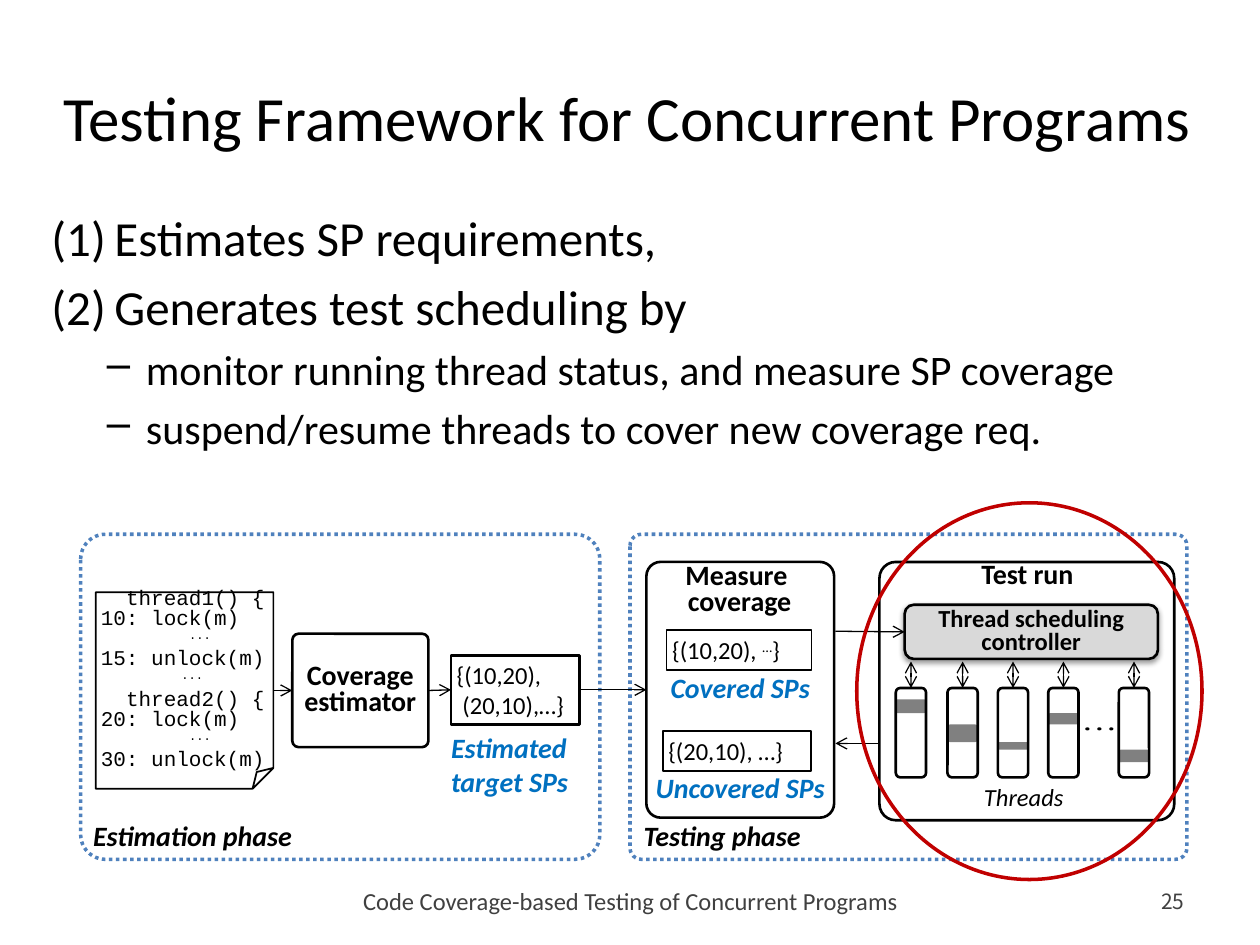
from lxml import etree
from pptx import Presentation
from pptx import util as u
from pptx.dml.color import RGBColor
from pptx.enum import dml, shapes, text
from pptx.oxml.ns import qn

COLORS = {"ink": "000000", "muted": "404040", "phase": "4F81BD", "label": "0070C0",
          "gray": "808080", "panel": "D9D9D9", "paper": "FFFFFF", "focus": "C00000"}
RECT, ROUND, OVAL, PAGE = (shapes.MSO_SHAPE.RECTANGLE, shapes.MSO_SHAPE.ROUNDED_RECTANGLE,
                           shapes.MSO_SHAPE.OVAL, shapes.MSO_SHAPE.FOLDED_CORNER)
LEFT, CENTER, RIGHT = text.PP_ALIGN.LEFT, text.PP_ALIGN.CENTER, text.PP_ALIGN.RIGHT
TOP, MIDDLE = text.MSO_ANCHOR.TOP, text.MSO_ANCHOR.MIDDLE

prs = Presentation()
prs.slide_width, prs.slide_height = u.Inches(10), u.Inches(7.5)
slide = prs.slides.add_slide(prs.slide_layouts[6])
CELL = prs.slide_width // 100  # the grid has 100 columns and 75 rows


def put(kind, box, lines=(), size=16, style="", color="ink", align=LEFT, anchor=TOP,
        inset=(1, .5), spacing=None, font="Calibri", fill=None, line=None, width=1.5, adj=None):
    """Place a shape, or a text box if kind is None; ^marks^ enclose raised text."""
    place = [round(v * CELL) for v in box]
    if kind is None:
        item = slide.shapes.add_textbox(*place)
    else:
        item = slide.shapes.add_shape(kind, *place)
        item.shadow.inherit = False
        if adj is not None:
            item.adjustments[0] = adj
        if fill:
            item.fill.solid()
            item.fill.fore_color.rgb = RGBColor.from_string(COLORS[fill])
        else:
            item.fill.background()
        if line:
            item.line.color.rgb = RGBColor.from_string(COLORS[line])
            item.line.width = u.Pt(width)
        else:
            item.line.fill.background()
    frame = item.text_frame
    frame.word_wrap, frame.vertical_anchor = True, anchor
    frame.margin_left = frame.margin_right = round(inset[0] * CELL)
    frame.margin_top = frame.margin_bottom = round(inset[1] * CELL)
    for n, words in enumerate(lines):
        par = frame.paragraphs[0] if n == 0 else frame.add_paragraph()
        par.alignment, par.line_spacing = align, spacing
        for i, part in enumerate(words.split("^")):
            if not part:
                continue
            run = par.add_run()
            run.text = part
            run.font.size, run.font.name = u.Pt(size), font
            run.font.bold, run.font.italic = "b" in style, "i" in style
            run.font.color.rgb = RGBColor.from_string(COLORS[color])
            if i % 2:
                run.font._element.set("baseline", "30000")
    return item


def arrow(start, end, source=None, target=None, ends=("tailEnd",)):
    """Draw an arrow; source and target are (shape, side) pairs to join."""
    link = slide.shapes.add_connector(shapes.MSO_CONNECTOR.STRAIGHT,
                                      *[round(v * CELL) for v in (*start, *end)])
    if source:
        link.begin_connect(*source)
    if target:
        link.end_connect(*target)
    link.line.color.rgb = RGBColor.from_string(COLORS["ink"])
    link.line.width = u.Pt(.75)
    for end_name in ends:
        etree.SubElement(link.line._get_or_add_ln(), qn("a:" + end_name), type="arrow")
    etree.SubElement(link._element.spPr, qn("a:effectLst"))


# Title, list and footer
put(None, (-.4, 3, 100.4, 12.5), ["Testing Framework for Concurrent Programs"], 36,
    align=CENTER, anchor=MIDDLE)
steps = ["Estimates SP requirements,", "Generates test scheduling by",
         "monitor running thread status, and measure SP coverage",
         "suspend/resume threads to cover new coverage req."]
body = put(None, (2.5, 16, 98.4, 29.4), steps, 28)
for n, par in enumerate(body.text_frame.paragraphs):
    props = par._p.get_or_add_pPr()
    size, margin, hang = (28, 5.6, 5) if n < 2 else (24, 8.1, 3.1)
    par.level = n // 2
    par.space_before = u.Pt(size * .2)
    par.runs[0].font.size = u.Pt(size)
    props.set("marL", str(round(margin * CELL)))
    props.set("indent", str(round(-hang * CELL)))
    if n < 2:
        etree.SubElement(props, qn("a:buAutoNum"), type="arabicParenBoth")
    else:
        etree.SubElement(props, qn("a:buChar"), char="–")
put(None, (16.1, 69.5, 67.9, 4), ["Code Coverage-based Testing of Concurrent Programs"], 14,
    color="muted", align=CENTER, anchor=MIDDLE)
put(None, (89.4, 69.5, 5.6, 4), ["25"], 12, color="muted", align=RIGHT, anchor=MIDDLE,
    font="Noto Sans CJK KR")

# The two phases
for name, left, width, label_left, label_width, corner in [
        ("Estimation phase", 6.4, 41.2, 6.4, 25.5, .076),
        ("Testing phase", 50, 44.2, 50.1, 19.8, .035)]:
    phase = put(ROUND, (left, 42.4, width, 25.8), line="phase", width=2, adj=corner)
    phase.line.dash_style = dml.MSO_LINE.ROUND_DOT
    put(None, (label_left, 64.5, label_width, 3.7), [name], style="bi")

# Estimation: code, estimator and its result
code = put(PAGE, (7.6, 47, 14.1, 15.6),
           ["thread1() {", "10: lock(m)", "^...^", "15: unlock(m)", "^...^",
            "thread2() {", "20: lock(m)", "^...^", "30: unlock(m)"],
           12, anchor=MIDDLE, inset=(.4, .5), spacing=.8, font="Courier New",
           line="ink", width=1)
fold = code._element.spPr.find(qn("a:prstGeom")).get_or_add_avLst()
etree.SubElement(fold, qn("a:gd"), name="adj", fmla="val 11700")
for n, indent in {0: 2, 2: 7, 4: 6.4, 5: 2, 7: 7}.items():
    code.text_frame.paragraphs[n]._p.get_or_add_pPr().set("marL", str(round(indent * CELL)))
estimator = put(ROUND, (23.2, 50.3, 10.8, 9), ["Coverage", "estimator"], style="b",
                align=CENTER, anchor=MIDDLE, inset=(0, 0), spacing=.8, line="ink", adj=.055)
put(RECT, (35.8, 58, 10.2, 7.5), ["Estimated", "target SPs"], style="bi", color="label",
    inset=(0, 0), fill="paper")
targets = put(RECT, (35.8, 52, 10.2, 5.5), [" {(10,20),", "(20,10),…}"], 14,
              inset=(0, .4), fill="paper", line="ink")
targets.text_frame.paragraphs[1]._p.get_or_add_pPr().set("marL", str(round(.9 * CELL)))

# Testing: coverage measurement
measure = put(ROUND, (51.3, 44.6, 14.9, 20.3), line="ink", adj=.076)
put(None, (52, 44.9, 13.4, 4), ["Measure ", "coverage"], style="b", align=CENTER,
    inset=(1, 0), spacing=.75)
for words, left, top, width in [(" {(10,20), ^…^}", 52.9, 50, 11.5),
                                (" {(20,10), …}", 52.6, 58, 11.8)]:
    put(RECT, (left, top, width, 3.2), [words], 14, inset=(0, .4),
        fill="paper", line="ink", width=1)
put(None, (51.3, 52.7, 14.9, 3.7), ["Covered SPs"], style="bi", color="label", align=CENTER)
put(None, (51.3, 61.2, 14.9, 3.2), ["Uncovered SPs"], style="bi", color="label",
    align=CENTER, inset=(0, .5), spacing=.8)

# Testing: test run with its controller and threads
put(ROUND, (69.8, 44.6, 23.4, 20.5), line="ink", adj=.063)
put(None, (69.9, 43.7, 23.3, 3.7), ["Test run"], style="b", align=CENTER)
controller = put(ROUND, (71.8, 48, 20.1, 4.3), ["Thread scheduling controller"], 14, "b",
                 align=CENTER, anchor=MIDDLE, spacing=.8, fill="panel", line="ink")
effects = controller._element.spPr.find(qn("a:effectLst"))
shade = etree.SubElement(effects, qn("a:outerShdw"), blurRad=str(u.Pt(3.1)),
                         dist=str(u.Pt(1.6)), dir="5400000", rotWithShape="0")
shade_color = etree.SubElement(shade, qn("a:srgbClr"), val=COLORS["ink"])
etree.SubElement(shade_color, qn("a:alpha"), val="38000")
put(None, (71.3, 61.6, 19.9, 3.4), ["Threads"], 14, "i", align=CENTER)
for left, band_top, band_height in [(71.1, 55.5, 1.1), (75.2, 57.5, 1.4), (79.2, 58.9, .6),
                                    (83.2, 56.6, .9), (88.8, 59.5, 1)]:
    put(ROUND, (left, band_top, 2.4, band_height), fill="gray", adj=.15)
    thread = put(ROUND, (left, 54.6, 2.4, 7.1), line="ink", adj=.15)
    arrow((left + 1.2, 54.6), (left + 1.2, 52.5), source=(thread, 0),
          ends=("headEnd", "tailEnd"))
for n in range(3):
    put(OVAL, (86.2 + n * .95, 57.8, .2, .1), fill="ink", line="ink", width=1)

# Flow between the parts
arrow((21.7, 54.8), (23.2, 54.8), (code, 3), (estimator, 1))
arrow((34, 54.8), (35.8, 54.8), (estimator, 3), (targets, 1))
arrow((46, 54.8), (51.3, 54.8), (targets, 3), (measure, 1))
arrow((66.3, 50.1), (71.8, 50.1), target=(controller, 1))
arrow((69.7, 59), (66.3, 59))
put(OVAL, (68, 39.9, 27.4, 29.9), line="focus", width=2)

prs.save("out.pptx")
